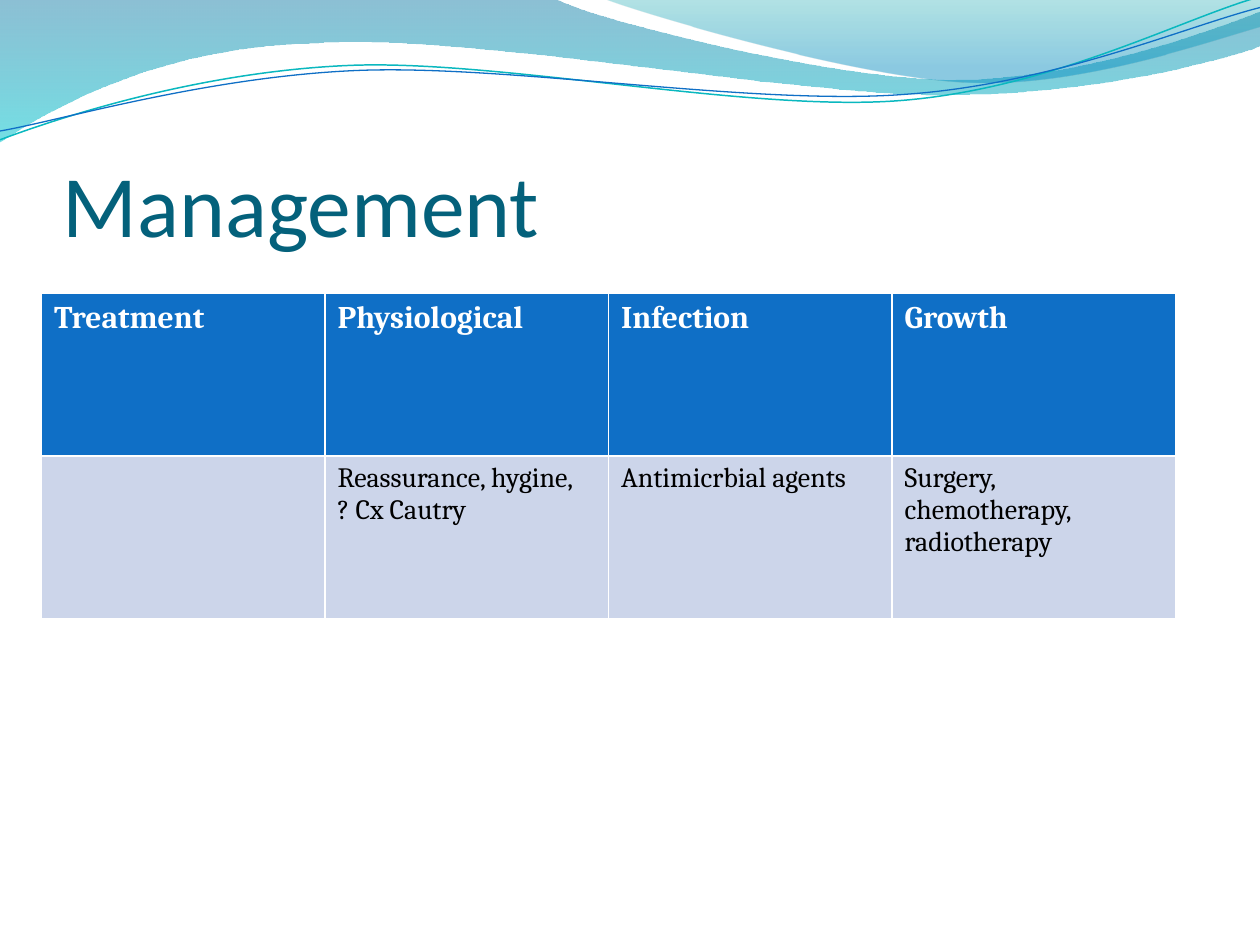
from dataclasses import dataclass
from typing import Optional

import pptx
import pptx.dml.color
import pptx.enum.text
import pptx.oxml.ns
import pptx.util
from lxml import etree
from pptx.util import Inches

Point = tuple[float, float]


@dataclass(frozen=True)
class Theme:
    title_font: str = "Calibri"
    body_font: str = "Cambria"
    title_size: float = 50
    header_size: float = 18
    body_size: float = 16
    title: str = "04617B"
    header_fill: str = "0F6FC6"
    body_fill: str = "CCD5EA"
    white: str = "FFFFFF"
    black: str = "000000"
    teal_line: str = "0AB8BF"
    blue_line: str = "0F6FC6"


@dataclass(frozen=True)
class Stop:
    position: float
    color: str
    opacity: int


@dataclass(frozen=True)
class Wave:
    start: Point
    segments: tuple[tuple[Point, ...], ...]
    gradient: Optional[tuple[Stop, Stop]] = None
    line_color: str = ""
    line_width: float = 0


@dataclass(frozen=True)
class RowStyle:
    fill: str
    color: str
    size: float
    bold: bool


THEME = Theme()

WAVES = (
    Wave((0, 0), (
        ((4.4, -0.01),),
        ((4.76, 0.17), (6.64, 0.63), (7.58, 0.63)),
        ((8.53, 0.63), (9.58, 0.26), (10, 0.09)),
        ((10.01, 0.36),),
        ((9.83, 0.44), (8.7, 0.76), (7.46, 0.75)),
        ((6.22, 0.75), (3.82, 0.28), (2.57, 0.34)),
        ((1.29, 0.36), (0.46, 0.83), (-0.01, 1.13)),
    ), gradient=(Stop(0, "0074A1", 45), Stop(1, "00C6CF", 55))),
    Wave((4.79, -0.01), (
        ((5.09, 0.11), (6.82, 0.62), (7.69, 0.65)),
        ((8.56, 0.69), (9.61, 0.32), (10, 0.21)),
        ((10, 0),),
    ), gradient=(Stop(0, "00A1A9", 30), Stop(0.8, "008BBF", 45))),
    Wave((0, 1.11), (
        ((0.48, 0.93), (1.58, 0.57), (2.77, 0.52)),
        ((3.95, 0.47), (5.93, 0.89), (7.13, 0.8)),
        ((8.33, 0.71), (9.38, 0.15), (9.98, -0.02)),
    ), line_color=THEME.teal_line, line_width=0.85),
    Wave((0, 1.04), (
        ((0.47, 0.96), (1.64, 0.61), (2.83, 0.56)),
        ((4.03, 0.51), (5.97, 0.84), (7.17, 0.75)),
        ((8.36, 0.67), (9.41, 0.21), (10, 0.06)),
    ), line_color=THEME.blue_line, line_width=0.75),
)

TREATMENTS = (
    ("Treatment", "Physiological", "Infection", "Growth"),
    ("", "Reassurance, hygine,\n? Cx Cautry", "Antimicrbial agents",
     "Surgery, chemotherapy, radiotherapy"),
)
ROW_STYLES = (
    RowStyle(THEME.header_fill, THEME.white, THEME.header_size, True),
    RowStyle(THEME.body_fill, THEME.black, THEME.body_size, False),
)


def rgb(value: str) -> pptx.dml.color.RGBColor:
    return pptx.dml.color.RGBColor.from_string(value)


def bend_segments(shape, segments: tuple[tuple[Point, ...], ...]) -> None:
    straight = list(shape.element.spPr.iter(pptx.oxml.ns.qn("a:lnTo")))
    for line, segment in zip(straight, segments):
        if len(segment) == 1:
            continue
        curve = etree.Element(pptx.oxml.ns.qn("a:cubicBezTo"))
        for x, y in segment:
            etree.SubElement(
                curve, pptx.oxml.ns.qn("a:pt"),
                x=str(Inches(x) - shape.left), y=str(Inches(y) - shape.top),
            )
        line.getparent().replace(line, curve)


def draw_wave(slide, wave: Wave) -> None:
    anchors = [wave.start, *(segment[-1] for segment in wave.segments)]
    corners = [(Inches(x), Inches(y)) for x, y in anchors]
    builder = slide.shapes.build_freeform(*corners[0])
    builder.add_line_segments(corners[1:], close=wave.gradient is not None)
    shape = builder.convert_to_shape()
    bend_segments(shape, wave.segments)
    shape.shadow.inherit = False
    if wave.gradient is None:
        shape.fill.background()
        shape.line.color.rgb = rgb(wave.line_color)
        shape.line.width = pptx.util.Pt(wave.line_width)
        return
    shape.line.fill.background()
    shape.fill.gradient()
    shape.fill.gradient_angle = 270
    for gradient_stop, stop in zip(shape.fill.gradient_stops, wave.gradient):
        gradient_stop.position = stop.position
        gradient_stop.color.rgb = rgb(stop.color)
    colors = shape.element.spPr.iter(pptx.oxml.ns.qn("a:srgbClr"))
    for color, stop in zip(colors, wave.gradient):
        etree.SubElement(color, pptx.oxml.ns.qn("a:alpha"), val=str(stop.opacity * 1000))


def style_runs(frame, font: str, size: float, color: str, bold: bool = False) -> None:
    for paragraph in frame.paragraphs:
        for run in paragraph.runs:
            run.font.name = font
            run.font.size = pptx.util.Pt(size)
            run.font.bold = bold
            run.font.color.rgb = rgb(color)


def draw_title(slide, text: str) -> None:
    title = slide.shapes.add_textbox(Inches(0.5), Inches(0.77), Inches(9), Inches(1.25))
    frame = title.text_frame
    frame.word_wrap = True
    frame.vertical_anchor = pptx.enum.text.MSO_ANCHOR.BOTTOM
    frame.margin_left = frame.margin_right = frame.margin_bottom = 0
    frame.margin_top = Inches(0.05)
    frame.text = text
    style_runs(frame, THEME.title_font, THEME.title_size, THEME.title)


def draw_table(slide) -> None:
    table = slide.shapes.add_table(
        len(TREATMENTS), len(TREATMENTS[0]),
        Inches(0.33), Inches(2.33), Inches(9), Inches(2.58),
    ).table
    for r, (texts, style) in enumerate(zip(TREATMENTS, ROW_STYLES)):
        for c, text in enumerate(texts):
            cell = table.cell(r, c)
            cell.fill.solid()
            cell.fill.fore_color.rgb = rgb(style.fill)
            cell.text_frame.text = text
            style_runs(cell.text_frame, THEME.body_font, style.size, style.color, style.bold)


def main() -> None:
    presentation = pptx.Presentation()
    presentation.slide_width = Inches(10)
    presentation.slide_height = Inches(7.5)
    slide = presentation.slides.add_slide(presentation.slide_layouts[6])
    slide.background.fill.solid()
    slide.background.fill.fore_color.rgb = rgb(THEME.white)
    for wave in WAVES:
        draw_wave(slide, wave)
    draw_title(slide, "Management")
    draw_table(slide)
    presentation.save("out.pptx")


if __name__ == "__main__":
    main()
